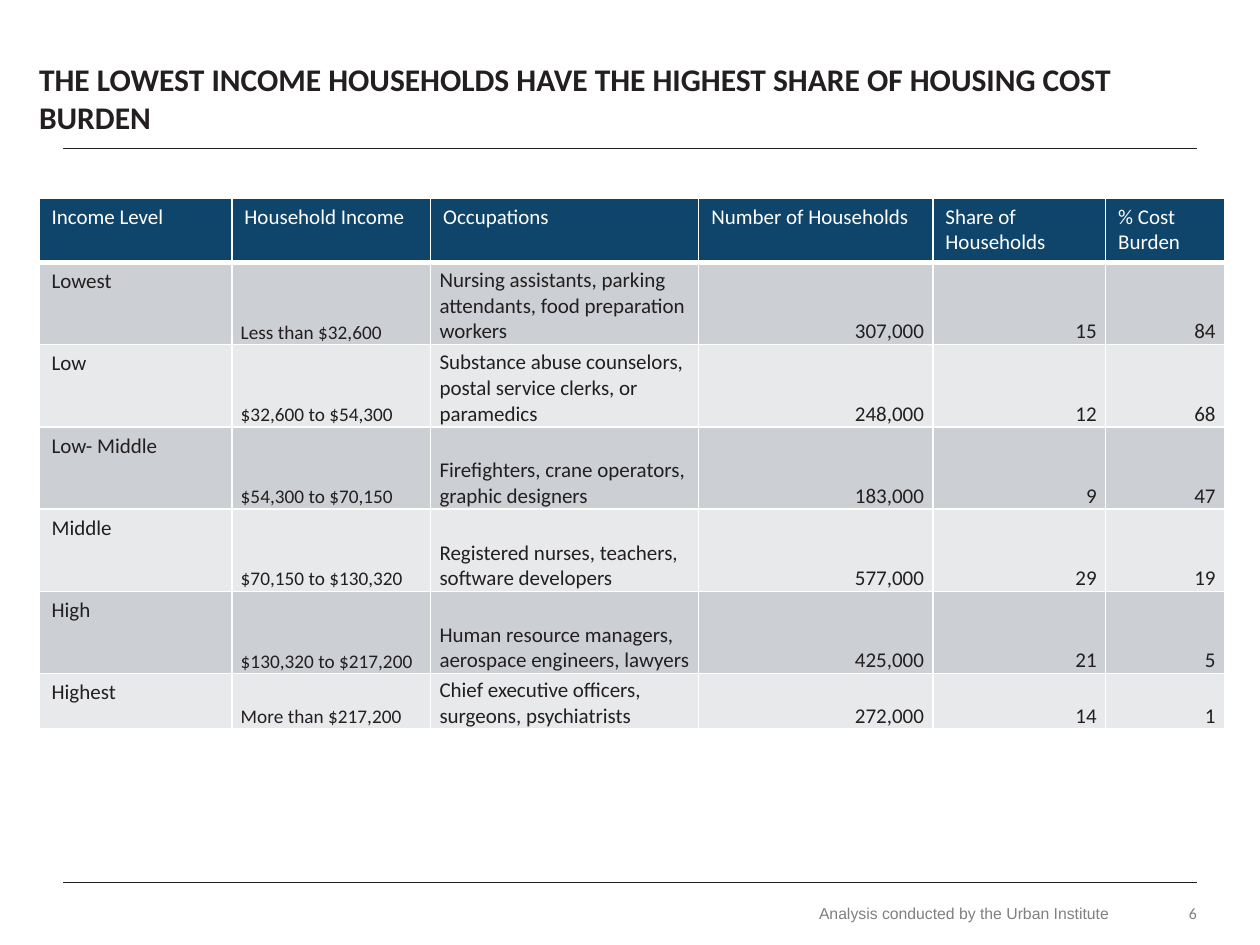
from dataclasses import dataclass

from lxml import etree
from pptx import Presentation
from pptx import util as u
from pptx.dml.color import RGBColor
from pptx.enum import shapes, text
from pptx.oxml import ns


@dataclass(frozen=True)
class Theme:
    ink: str = "231F20"
    grey: str = "808080"
    white: str = "FFFFFF"
    header: str = "0F456B"
    bands: tuple = ("CCCFD4", "E7E9EB")
    font: str = "Calibri"
    footer_font: str = "Arial"
    title_size: float = 18
    table_size: float = 12
    income_size: float = 11
    footer_size: float = 9


LEFT, TOP, RIGHT = text.PP_ALIGN.LEFT, text.MSO_ANCHOR.TOP, text.PP_ALIGN.RIGHT
MIDDLE, BOTTOM = text.MSO_ANCHOR.MIDDLE, text.MSO_ANCHOR.BOTTOM

HEADINGS = ["Income Level", "Household Income", "Occupations",
            "Number of Households", "Share of Households", "% Cost Burden"]
HOUSEHOLDS = [
    ["Lowest", "Less than $32,600",
     "Nursing assistants, parking attendants, food preparation workers",
     "307,000", "15", "84"],
    ["Low", "$32,600 to $54,300",
     "Substance abuse counselors, postal service clerks, or paramedics",
     "248,000", "12", "68"],
    ["Low- Middle", "$54,300 to $70,150",
     "Firefighters, crane operators, graphic designers",
     "183,000", "9", "47"],
    ["Middle", "$70,150 to $130,320",
     "Registered nurses, teachers, software developers",
     "577,000", "29", "19"],
    ["High", "$130,320 to $217,200",
     "Human resource managers, aerospace engineers, lawyers",
     "425,000", "21", "5"],
    ["Highest", "More than $217,200",
     "Chief executive officers, surgeons, psychiatrists",
     "272,000", "14", "1"],
]
COLUMN_WIDTHS = [110.2, 113.6, 153.2, 133.8, 98.7, 68]
ROW_HEIGHTS = [36.7] + [47] * 5 + [31.6]


class SlideBuilder:
    def __init__(self, slide, theme):
        self.slide = slide
        self.theme = theme

    def add_words(self, frame, words, size, color, font=None, bold=False, align=LEFT):
        paragraph = frame.paragraphs[0]
        paragraph.alignment = align
        run = paragraph.add_run()
        run.text = words
        run.font.name = font or self.theme.font
        run.font.size = u.Pt(size)
        run.font.bold = bold
        run.font.color.rgb = RGBColor.from_string(color)
        return paragraph

    def frame(self, shape, anchor, insets):
        """Wrap the shape's text; insets run left, top, right, bottom."""
        frame = shape.text_frame
        frame.word_wrap = True
        frame.auto_size = text.MSO_AUTO_SIZE.NONE
        frame.vertical_anchor = anchor
        (frame.margin_left, frame.margin_top,
         frame.margin_right, frame.margin_bottom) = map(u.Pt, insets)
        return frame

    def title(self, words, left, top, width, height, bottom_inset):
        shape = self.slide.shapes.title
        shape.left, shape.top, shape.width, shape.height = map(
            u.Pt, (left, top, width, height))
        frame = self.frame(shape, BOTTOM, (0, 0, 0, bottom_inset))
        self.add_words(frame, words, self.theme.title_size, self.theme.ink, bold=True)

    def rule(self, left, right, y):
        line = self.slide.shapes.add_connector(
            shapes.MSO_CONNECTOR.STRAIGHT, *map(u.Pt, (left, y, right, y)))
        line.line.width = u.Pt(0.5)
        line.line.color.rgb = RGBColor.from_string(self.theme.ink)
        etree.SubElement(line._element.spPr, ns.qn("a:effectLst"))

    def footer(self, words, left, top, width, height, insets, font=None,
               align=LEFT, line_spacing=None):
        box = self.slide.shapes.add_textbox(*map(u.Pt, (left, top, width, height)))
        paragraph = self.add_words(self.frame(box, MIDDLE, insets), words,
                                   self.theme.footer_size, self.theme.grey, font,
                                   align=align)
        paragraph.line_spacing = line_spacing

    def borders(self, cell, top, bottom):
        properties = cell._tc.get_or_add_tcPr()
        for side, width in (("L", 1), ("R", 1), ("T", top), ("B", bottom)):
            line = etree.SubElement(properties, ns.qn(f"a:ln{side}"), w=str(u.Pt(width)))
            fill = etree.SubElement(line, ns.qn("a:solidFill"))
            etree.SubElement(fill, ns.qn("a:srgbClr"), val=self.theme.white)

    def cell(self, cell, words, row, column):
        theme = self.theme
        is_header = row == 0
        self.borders(cell, 3 if row == 1 else 1, 3 if is_header else 1)
        cell.fill.solid()
        cell.fill.fore_color.rgb = RGBColor.from_string(
            theme.header if is_header else theme.bands[(row - 1) % 2])
        is_data = not is_header and column > 0
        cell.vertical_anchor = BOTTOM if is_data else TOP
        cell.margin_left = cell.margin_right = u.Pt(5.1 if is_data else 7.2)
        cell.margin_top = cell.margin_bottom = u.Pt(0 if is_data else 3.6)
        self.add_words(cell.text_frame, words,
                       theme.income_size if is_data and column == 1 else theme.table_size,
                       theme.white if is_header else theme.ink,
                       align=RIGHT if is_data and column > 2 else LEFT)

    def table(self, rows, left, top, widths, heights):
        table = self.slide.shapes.add_table(
            len(rows), len(widths),
            *map(u.Pt, (left, top, sum(widths), sum(heights)))).table
        for column, width in zip(table.columns, widths):
            column.width = u.Pt(width)
        for row, height in zip(table.rows, heights):
            row.height = u.Pt(height)
        for row, values in enumerate(rows):
            for column, words in enumerate(values):
                self.cell(table.cell(row, column), words, row, column)


def main():
    presentation = Presentation()
    presentation.slide_width, presentation.slide_height = u.Pt(720), u.Pt(540)
    slide = presentation.slides.add_slide(presentation.slide_layouts[5])
    theme = Theme()
    builder = SlideBuilder(slide, theme)

    for y in (504, 85):
        builder.rule(36, 684, y)
    builder.title("THE LOWEST INCOME HOUSEHOLDS HAVE THE HIGHEST SHARE OF "
                  "HOUSING COST BURDEN", 22.3, 31, 648, 68.4, bottom_inset=22)
    builder.table([HEADINGS] + HOUSEHOLDS, 22.3, 113.2, COLUMN_WIDTHS, ROW_HEIGHTS)
    builder.footer("6", 615, 507.6, 69, 28.8, (7.2, 3.6, 0, 3.6), align=RIGHT)
    builder.footer("Analysis conducted by the Urban Institute", 468, 514, 176.4, 17.3,
                   (0, 3.6, 0, 3.6), theme.footer_font, line_spacing=0.9)
    presentation.save("out.pptx")


if __name__ == "__main__":
    main()
